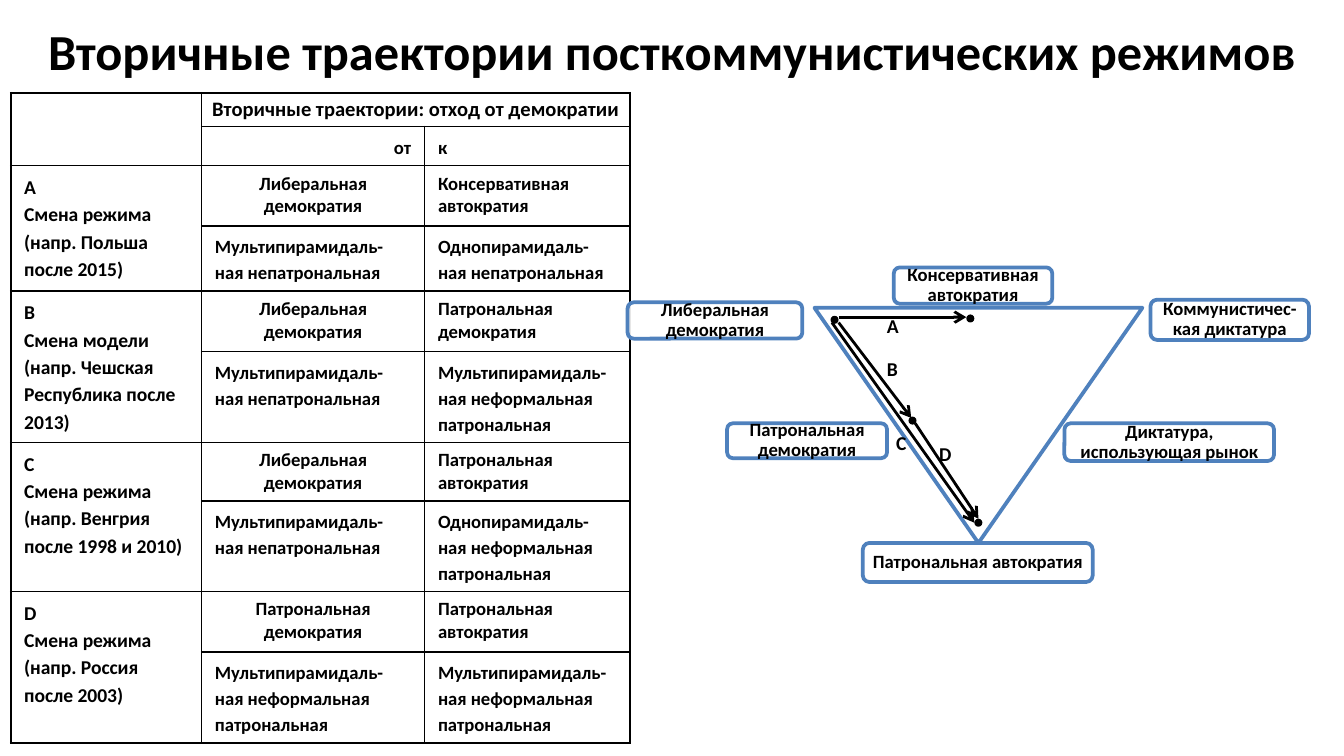
from lxml import etree
from pptx import Presentation, util as u
from pptx.dml import color
from pptx.enum import shapes, text
from pptx.oxml import ns

# Content
TITLE = "Вторичные траектории пoсткoммунистических рeжимов"
TABLE_HEADING = "Вторичные траектории: отход от дeмoкрaтии"
DIRECTIONS = ("от", "к")
SINGLE = "Mультипирамидаль-ная непатрональная"
INFORMAL_MULTI = "Mультипирамидаль-ная неформальная\nпатрональная"
INFORMAL_ONE = "Однопирамидаль-ная неформальная\nпатрональная"
LIBERAL, CONSERVATIVE = "Либеральная демократия", "Консервативная aвтократия"
PATRONAL, AUTOCRACY = "Патрональная демократия", "Патрональная автократия"
# Case, regime types (from, to), pyramid structures (from, to)
CASES = [
    ("A\nСмена режима\n(напр. Польша после 2015)",
     (LIBERAL, CONSERVATIVE), (SINGLE, "Однопирамидаль-ная непатрональная")),
    ("B\nСмена модели\n(напр. Чешская Республика после 2013)",
     (LIBERAL, PATRONAL), (SINGLE, INFORMAL_MULTI)),
    ("C\nСмена режима\n(напр. Венгрия после 1998 и 2010)",
     (LIBERAL, AUTOCRACY), (SINGLE, INFORMAL_ONE)),
    ("D\nСмена режима\n(напр. Россия после 2003)",
     (PATRONAL, AUTOCRACY), (INFORMAL_MULTI, INFORMAL_MULTI)),
]

# Layout in inches
SLIDE_SIZE = (10, 10 * 9 / 16)
COLUMNS = (1.42, 1.66, 1.53)
ROWS = (0.25, 0.21, 0.45, 0.4, 0.45, 0.58, 0.36, 0.61, 0.45, 0.6)
TRIANGLE = (6.06, 2.29, 2.44, 1.75)
REGIMES = [
    ("Кoммунистичес-кая диктатура", (8.56, 2.23, 1.18, 0.3)),
    (LIBERAL, (4.67, 2.25, 1.3, 0.27)),
    (AUTOCRACY, (6.42, 4.04, 1.71, 0.29)),
    (CONSERVATIVE, (6.65, 1.99, 1.18, 0.27)),
    ("Диктатура, использующая рынок", (7.92, 3.15, 1.56, 0.28)),
    (PATRONAL, (5.41, 3.15, 1.19, 0.26)),
]
DOT_SIZE = 0.06
DOT_CENTRES = [(6.21, 2.38), (7.22, 2.37), (6.79, 3.13), (7.28, 3.89)]
# Letter, its left top corner, arrow start, arrow end
TRAJECTORIES = [
    ("A", (6.5, 2.29), (6.24, 2.36), (7.19, 2.36)),
    ("B", (6.5, 2.61), (6.24, 2.4), (6.78, 3.11)),
    ("C", (6.57, 3.16), (6.19, 2.4), (7.25, 3.89)),
    ("D", (6.89, 3.24), (6.81, 3.15), (7.28, 3.86)),
]

THEME = {
    "font": "Calibri", "ink": "000000", "accent": "4F81BD", "paper": "FFFFFF",
    "title": 27, "heading": 11, "case": 10.5, "body": 10,
    "border": 1, "outline": 2, "arrow": 1.5,
}
LEFT, CENTER, RIGHT = text.PP_ALIGN.LEFT, text.PP_ALIGN.CENTER, text.PP_ALIGN.RIGHT


def rgb(name):
    return color.RGBColor.from_string(THEME[name])


def inches(values):
    return [u.Inches(value) for value in values]


def write(frame, words, size, align=LEFT, spacing=1.0):
    frame.text = words
    for paragraph in frame.paragraphs:
        paragraph.alignment = align
        paragraph.line_spacing = spacing
        for run in paragraph.runs:
            run.font.name = THEME["font"]
            run.font.size = u.Pt(THEME[size])
            run.font.bold = True
            run.font.color.rgb = rgb("ink")


def set_insets(holder, inset):
    holder.margin_left = holder.margin_right = u.Inches(inset)
    holder.margin_top = holder.margin_bottom = u.Inches(inset)


def add_label(slide, box, words, size, align=LEFT, anchor=text.MSO_ANCHOR.TOP):
    frame = slide.shapes.add_textbox(*inches(box)).text_frame
    frame.word_wrap = True
    frame.vertical_anchor = anchor
    write(frame, words, size, align)


def add_shape(slide, kind, box):
    shape = slide.shapes.add_shape(kind, *inches(box))
    shape.shadow.inherit = False
    return shape


def outline(shape):
    shape.line.color.rgb = rgb("accent")
    shape.line.width = u.Pt(THEME["outline"])


def add_borders(cell):
    cell.fill.background()
    properties = cell._tc.get_or_add_tcPr()
    for index, side in enumerate(("lnL", "lnR", "lnT", "lnB")):
        line = etree.Element(ns.qn(f"a:{side}"), w=str(u.Pt(THEME["border"])))
        fill = etree.SubElement(line, ns.qn("a:solidFill"))
        etree.SubElement(fill, ns.qn("a:srgbClr"), val=THEME["ink"])
        properties.insert(index, line)


def shrink_empty(cell):
    """Keep an empty cell from stretching its row."""
    paragraph = cell.text_frame.paragraphs[0]._p
    etree.SubElement(paragraph, ns.qn("a:endParaRPr"), sz=str(100 * THEME["body"]))


def add_table(slide):
    box = (0.08, 0.69, sum(COLUMNS), sum(ROWS))
    table = slide.shapes.add_table(len(ROWS), len(COLUMNS), *inches(box)).table
    table.first_row = table.horz_banding = False
    for column, width in zip(table.columns, COLUMNS):
        column.width = u.Inches(width)
    for row, height in zip(table.rows, ROWS):
        row.height = u.Inches(height)
    for cell in table.iter_cells():
        add_borders(cell)
    # First column: one merged cell for every two rows
    for top in range(0, len(ROWS), 2):
        table.cell(top, 0).merge(table.cell(top + 1, 0))
    # Header
    heading = table.cell(0, 1)
    heading.merge(table.cell(0, 2))
    set_insets(heading, 0)
    write(heading.text_frame, TABLE_HEADING, "heading", CENTER, 1.15)
    for column, (words, align) in enumerate(zip(DIRECTIONS, (RIGHT, LEFT)), 1):
        write(table.cell(1, column).text_frame, words, "body", align, 1.15)
    # Cases
    for index, (case, types, structures) in enumerate(CASES, 1):
        top = 2 * index
        write(table.cell(top, 0).text_frame, case, "case", LEFT, 1.15)
        for column, align in ((1, CENTER), (2, LEFT)):
            write(table.cell(top, column).text_frame, types[column - 1], "body", align)
            write(table.cell(top + 1, column).text_frame,
                  structures[column - 1], "body", LEFT, 1.15)
    for cell in table.iter_cells():
        if not cell.text_frame.text:
            shrink_empty(cell)


def add_regime(slide, words, box):
    shape = add_shape(slide, shapes.MSO_SHAPE.ROUNDED_RECTANGLE, box)
    shape.fill.solid()
    shape.fill.fore_color.rgb = rgb("paper")
    tint = shape._element.spPr.find(".//" + ns.qn("a:srgbClr"))
    etree.SubElement(tint, ns.qn("a:alpha"), val="90000")
    outline(shape)
    frame = shape.text_frame
    frame.word_wrap = True
    frame.vertical_anchor = text.MSO_ANCHOR.MIDDLE
    set_insets(frame, 0.03)
    write(frame, words, "body", CENTER, 0.9)


def add_dot(slide, x, y):
    box = (x - DOT_SIZE / 2, y - DOT_SIZE / 2, DOT_SIZE, DOT_SIZE)
    dot = add_shape(slide, shapes.MSO_SHAPE.OVAL, box)
    dot.fill.solid()
    dot.fill.fore_color.rgb = rgb("ink")
    dot.line.fill.background()


def add_arrow(slide, start, end):
    arrow = slide.shapes.add_connector(shapes.MSO_CONNECTOR.STRAIGHT, *inches(start + end))
    arrow.line.color.rgb = rgb("ink")
    arrow.line.width = u.Pt(THEME["arrow"])
    etree.SubElement(arrow.line._get_or_add_ln(), ns.qn("a:tailEnd"), type="arrow")
    etree.SubElement(arrow._element.spPr, ns.qn("a:effectLst"))


def main():
    presentation = Presentation()
    presentation.slide_width, presentation.slide_height = inches(SLIDE_SIZE)
    slide = presentation.slides.add_slide(presentation.slide_layouts[6])
    add_label(slide, (0, -0.02, 10, 0.79), TITLE, "title", CENTER, text.MSO_ANCHOR.MIDDLE)
    add_table(slide)
    # Triangle of regimes
    triangle = add_shape(slide, shapes.MSO_SHAPE.ISOSCELES_TRIANGLE, TRIANGLE)
    triangle.rotation = 180
    triangle.fill.background()
    outline(triangle)
    for words, box in REGIMES:
        add_regime(slide, words, box)
    # Trajectories
    for x, y in DOT_CENTRES:
        add_dot(slide, x, y)
    for letter, corner, start, end in TRAJECTORIES:
        add_arrow(slide, start, end)
        add_label(slide, corner + (0.3, 0.29), letter, "case")
    presentation.save("out.pptx")


if __name__ == "__main__":
    main()
